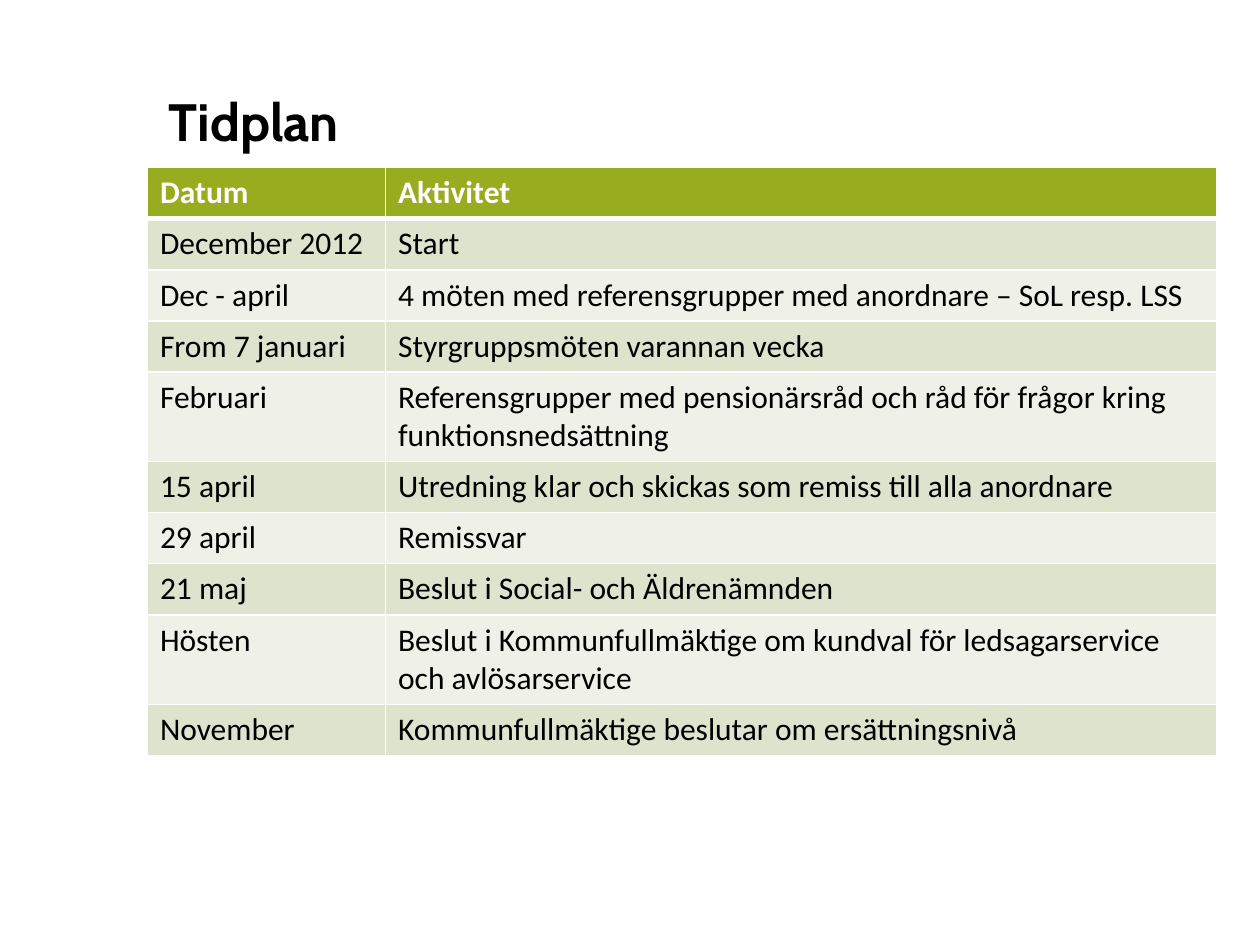
from lxml import etree
from pptx import Presentation
from pptx.dml.color import RGBColor as RGB
from pptx.enum.text import MSO_ANCHOR as Anchor, PP_ALIGN as Align
from pptx.oxml.ns import qn
from pptx.util import Inches, Pt

COLORS = {
    "text": "000000",
    "white": "FFFFFF",
    "header": "97AC1E",
    "odd": "DDE3CD",
    "even": "EFF1E8",
}

SCHEDULE = [
    ("Datum", "Aktivitet"),
    ("December 2012", "Start"),
    ("Dec - april", "4 möten med referensgrupper med anordnare – SoL resp. LSS"),
    ("From 7 januari", "Styrgruppsmöten varannan vecka"),
    ("Februari", "Referensgrupper med pensionärsråd och råd för frågor kring funktionsnedsättning"),
    ("15 april", "Utredning klar och skickas som remiss till alla anordnare"),
    ("29 april", "Remissvar"),
    ("21 maj", "Beslut i Social- och Äldrenämnden"),
    ("Hösten", "Beslut i Kommunfullmäktige om kundval för ledsagarservice och avlösarservice"),
    ("November", "Kommunfullmäktige beslutar om ersättningsnivå"),
]


class Deck:
    title_font = "Cabin"
    body_font = "Calibri"

    def __init__(self, width, height):
        self.prs = Presentation()
        self.prs.slide_width, self.prs.slide_height = Inches(width), Inches(height)
        self.s = None

    def add_slide(self):
        self.s = self.prs.slides.add_slide(self.prs.slide_layouts[5])

    def style(self, p, font, size, color, bold):
        for r in p.runs:
            r.font.name, r.font.size, r.font.bold = font, Pt(size), bold
            r.font.color.rgb = RGB.from_string(COLORS[color])

    def title(self, text, x, y, w, h):
        sp = self.s.shapes.title
        sp.left, sp.top, sp.width, sp.height = map(Inches, (x, y, w, h))
        tf = sp.text_frame
        tf.text = text
        tf.vertical_anchor = Anchor.MIDDLE
        p = tf.paragraphs[0]
        p.alignment, p.line_spacing = Align.LEFT, Pt(40)
        self.style(p, self.title_font, 30, "text", True)

    def border(self, cell, side, width):
        tcPr = cell._tc.get_or_add_tcPr()
        ln = etree.SubElement(tcPr, qn(f"a:ln{side}"), w=str(Pt(width)))
        fill = etree.SubElement(ln, qn("a:solidFill"))
        etree.SubElement(fill, qn("a:srgbClr"), val=COLORS["white"])

    def table(self, rows, x, y, col_widths, row_height):
        frame = self.s.shapes.add_table(
            len(rows), len(col_widths), Inches(x), Inches(y),
            Inches(sum(col_widths)), Inches(row_height * len(rows)))
        table = frame.table
        for col, width in zip(table.columns, col_widths):
            col.width = Inches(width)
        for i, values in enumerate(rows):
            table.rows[i].height = Inches(row_height)
            header = i == 0
            fill = "header" if header else "odd" if i % 2 else "even"
            for j, value in enumerate(values):
                cell = table.cell(i, j)
                cell.text = value
                self.style(cell.text_frame.paragraphs[0], self.body_font, 18,
                           "white" if header else "text", header)
                for side in "LRTB":
                    thick = (i, side) in ((0, "B"), (1, "T"))
                    self.border(cell, side, 3 if thick else 1)
                cell.fill.solid()
                cell.fill.fore_color.rgb = RGB.from_string(COLORS[fill])


def main():
    deck = Deck(10, 7.5)
    deck.add_slide()
    deck.title("Tidplan", 1.24, 0.3, 8.49, 1.25)
    deck.table(SCHEDULE, 1.17, 1.33, (1.89, 6.6), 0.4)
    deck.prs.save("out.pptx")


if __name__ == "__main__":
    main()
